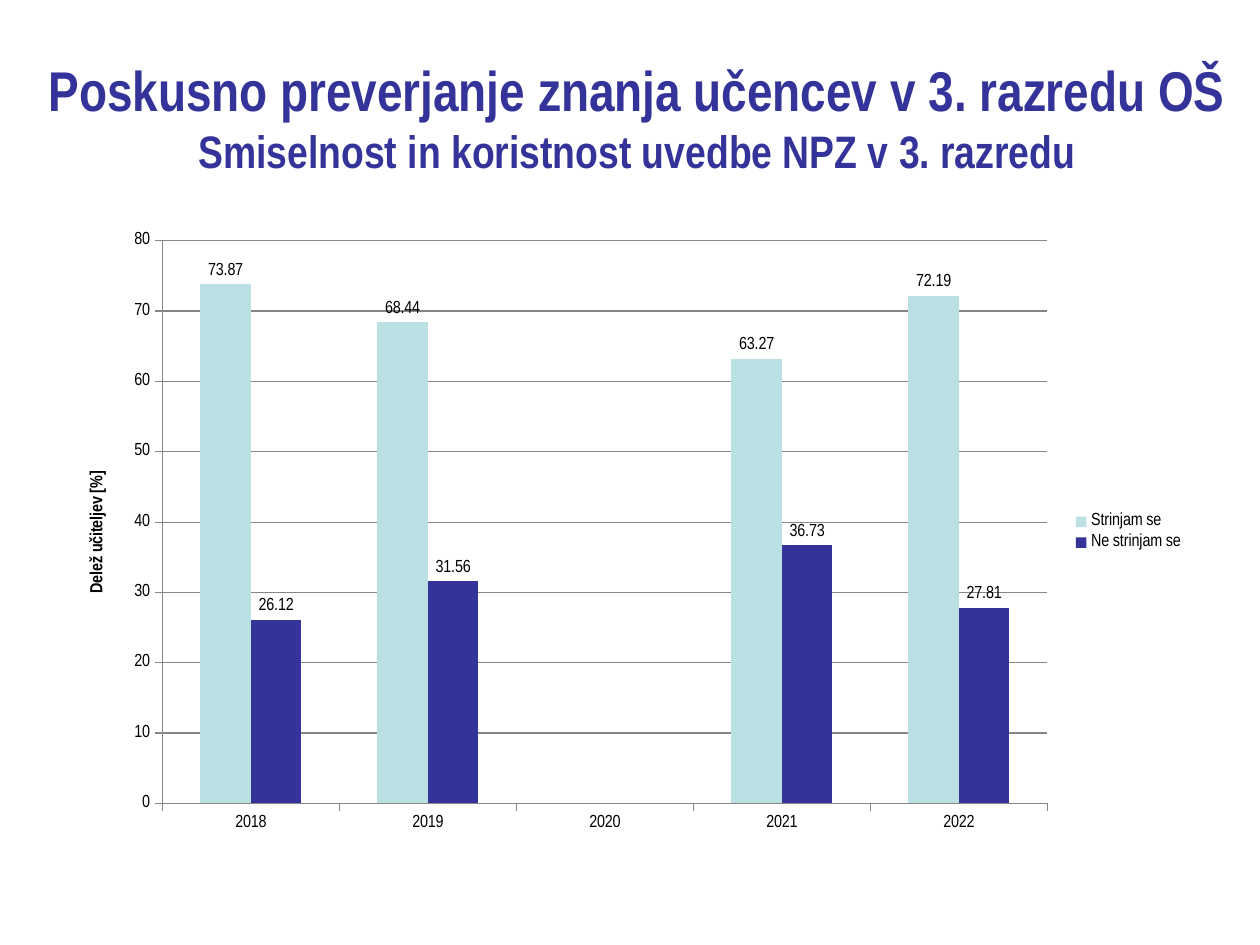
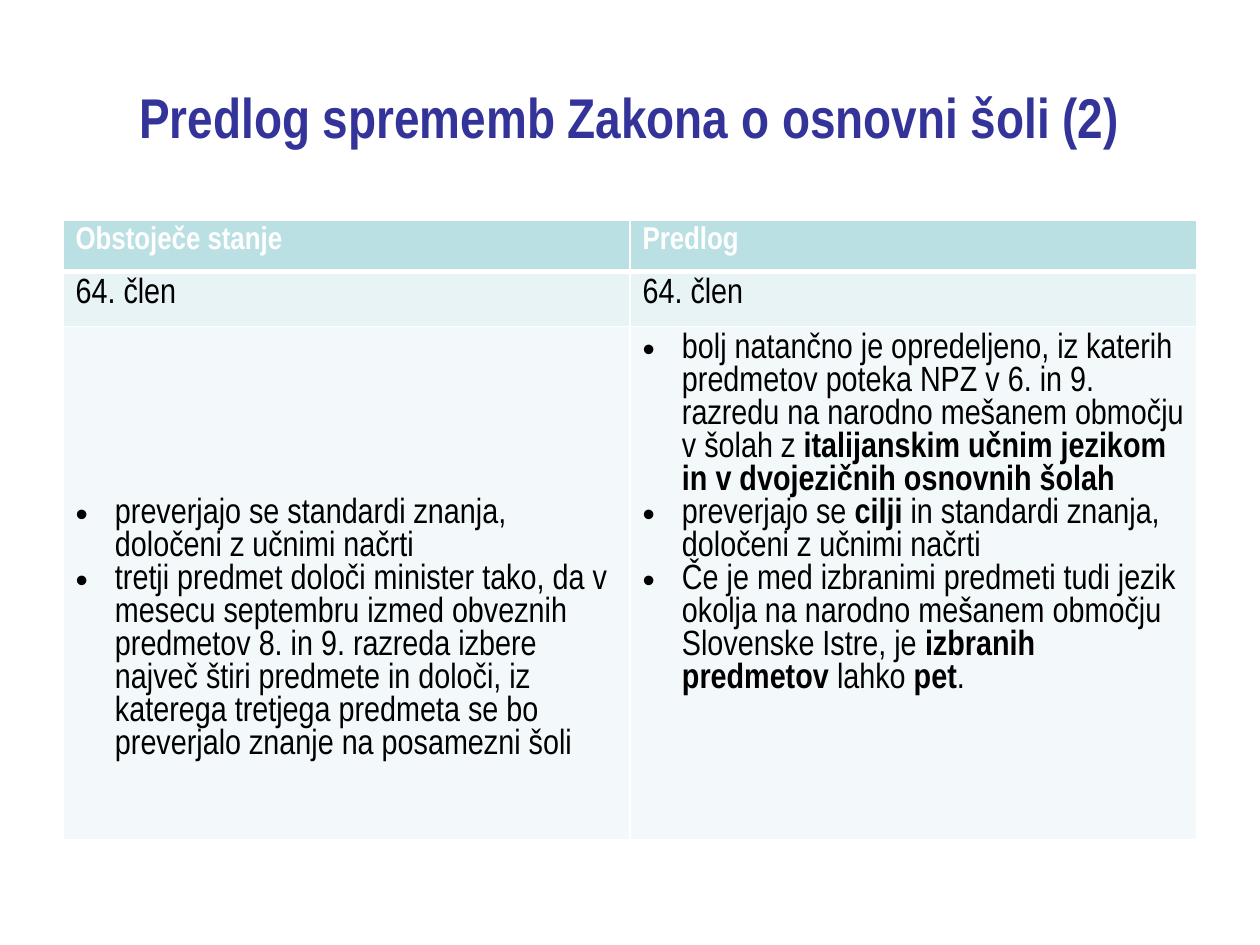
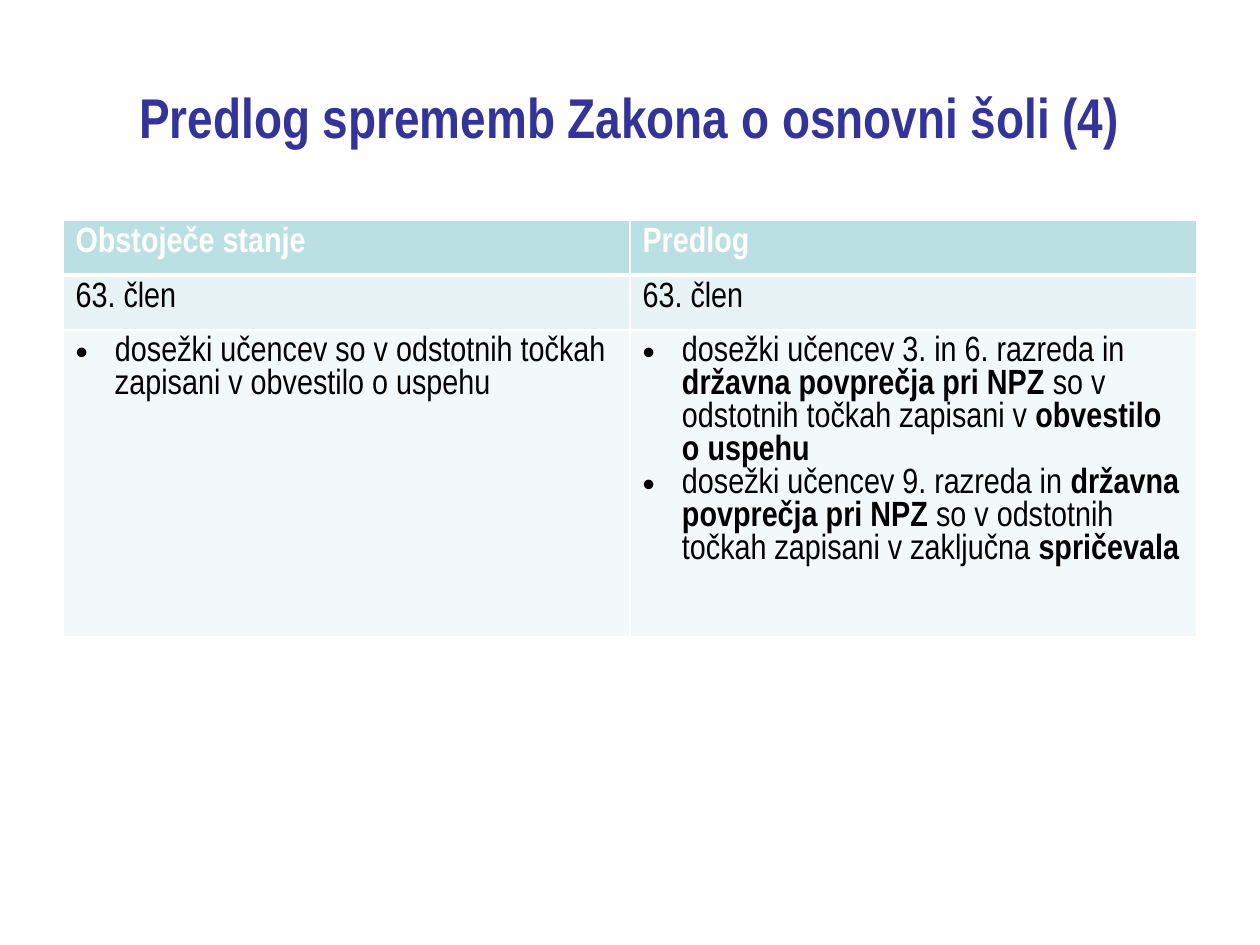
import pptx
import pptx.chart.data
import pptx.dml.color
import pptx.enum.chart
import pptx.enum.text
import pptx.oxml
import pptx.oxml.ns
import pptx.util
from dataclasses import dataclass

Pt = pptx.util.Pt


@dataclass(frozen=True)
class Theme:
    font: str = "Arial Narrow"
    navy: str = "333399"
    teal: str = "BBE0E3"
    pale: str = "E7F3F4"
    faint: str = "F3F9FA"
    white: str = "FFFFFF"
    black: str = "000000"
    grid: str = "868686"
    title_size: int = 32
    subtitle_size: int = 26
    body_size: int = 20
    chart_size: int = 10


THEME = Theme()

CHART_TITLE = [
    ("Poskusno preverjanje znanja učencev v 3. razredu OŠ", THEME.title_size),
    ("Smiselnost in koristnost uvedbe NPZ v 3. razredu", THEME.subtitle_size),
]
YEARS = ["2018", "2019", "2020", "2021", "2022"]
VALUE_TITLE = "Delež učiteljev [%]"
SERIES = [
    ("Strinjam se", [73.87, 68.44, None, 63.27, 72.19], THEME.teal),
    ("Ne strinjam se", [26.12, 31.56, None, 36.73, 27.81], THEME.navy),
]

# Text between double asterisks is bold.
COLUMN_HEADS = ["Obstoječe stanje", "Predlog"]
PROPOSALS = [
    {
        "title": "Predlog sprememb Zakona o osnovni šoli (2)",
        "head_size": 18,
        "article": "64. člen",
        "body_height": 270,
        "lines_above": (5, 0),
        "body": (
            [
                "preverjajo se standardi znanja, določeni z učnimi načrti",
                "tretji predmet določi minister tako, da v mesecu septembru izmed "
                "obveznih predmetov 8. in 9. razreda izbere največ štiri predmete in "
                "določi, iz katerega tretjega predmeta se bo preverjalo znanje na "
                "posamezni šoli",
            ],
            [
                "bolj natančno je opredeljeno, iz katerih predmetov poteka NPZ v 6. in "
                "9. razredu na narodno mešanem območju v šolah z **italijanskim učnim "
                "jezikom in v dvojezičnih osnovnih šolah**",
                "preverjajo se **cilji **in standardi znanja, določeni z učnimi načrti",
                "Če je med izbranimi predmeti tudi jezik okolja na narodno mešanem "
                "območju Slovenske Istre, je **izbranih predmetov **lahko **pet**.",
            ],
        ),
    },
    {
        "title": "Predlog sprememb Zakona o osnovni šoli (4)",
        "head_size": 20,
        "article": "63. člen",
        "body_height": 157,
        "lines_above": (0, 0),
        "body": (
            ["dosežki učencev so v odstotnih točkah zapisani v obvestilo o uspehu"],
            [
                "dosežki učencev 3. in 6. razreda in **državna povprečja pri NPZ **so v "
                "odstotnih točkah zapisani v **obvestilo o uspehu**",
                "dosežki učencev 9. razreda in **državna povprečja pri NPZ **so v "
                "odstotnih točkah zapisani v zaključna **spričevala**",
            ],
        ),
    },
]

PAGE_WIDTH, PAGE_HEIGHT = 720, 540
MARGIN, CONTENT_TOP = 36, 126
CONTENT_WIDTH = PAGE_WIDTH - 2 * MARGIN
CHART_HEIGHT = 356.4
TITLE_TOP, TITLE_HEIGHT = 21.6, 90
ROW_HEIGHT = 29.2
CELL_TOP_MARGIN = 3.6
BODY_LINE = 18.86
BULLET_INDENT = 22.5


def rgb(color):
    return pptx.dml.color.RGBColor.from_string(color)


def style(font, size, color, bold=False):
    font.name, font.size, font.bold = THEME.font, Pt(size), bold
    font.color.rgb = rgb(color)


def add_xml(parent, tag, **attributes):
    child = pptx.oxml.parse_xml(f"<{tag} {pptx.oxml.ns.nsdecls('a')}/>")
    for name, value in attributes.items():
        child.set(name, str(value))
    parent.append(child)
    return child


def add_title(page, lines, left=MARGIN, width=CONTENT_WIDTH):
    box = page.shapes.add_textbox(Pt(left), Pt(TITLE_TOP), Pt(width), Pt(TITLE_HEIGHT))
    frame = box.text_frame
    frame.word_wrap = True
    frame.vertical_anchor = pptx.enum.text.MSO_ANCHOR.MIDDLE
    frame.text = "\v".join(text for text, _ in lines)
    para = frame.paragraphs[0]
    para.alignment = pptx.enum.text.PP_ALIGN.CENTER
    for span, (_, size) in zip(para.runs, lines):
        style(span.font, size, THEME.navy, True)


def add_agreement_chart(page):
    data = pptx.chart.data.CategoryChartData()
    data.categories = YEARS
    for name, values, _ in SERIES:
        data.add_series(name, values)
    chart = page.shapes.add_chart(
        pptx.enum.chart.XL_CHART_TYPE.COLUMN_CLUSTERED,
        Pt(MARGIN), Pt(CONTENT_TOP), Pt(CONTENT_WIDTH), Pt(CHART_HEIGHT), data,
    ).chart
    style(chart.font, THEME.chart_size, THEME.black)
    chart.has_title = False
    chart.has_legend = True
    chart.legend.position = pptx.enum.chart.XL_LEGEND_POSITION.RIGHT
    chart.legend.include_in_layout = False

    plot = chart.plots[0]
    plot.gap_width, plot.overlap = 150, 0
    plot.vary_by_categories = False
    for series, (_, _, color) in zip(plot.series, SERIES):
        series.format.fill.solid()
        series.format.fill.fore_color.rgb = rgb(color)
        series.data_labels.show_value = True
        series.data_labels.position = pptx.enum.chart.XL_LABEL_POSITION.OUTSIDE_END

    value_axis = chart.value_axis
    value_axis.minimum_scale, value_axis.maximum_scale = 0, 80
    value_axis.major_unit = 10
    value_axis.axis_title.text_frame.text = VALUE_TITLE
    span = value_axis.axis_title.text_frame.paragraphs[0].runs[0]
    style(span.font, THEME.chart_size, THEME.black, True)
    for axis in (chart.category_axis, value_axis):
        axis.major_tick_mark = pptx.enum.chart.XL_TICK_MARK.OUTSIDE
        axis.format.line.color.rgb = rgb(THEME.grid)
    value_axis.major_gridlines.format.line.color.rgb = rgb(THEME.grid)


def add_borders(cell, row):
    """White lines, with a heavier one between the head and the first row."""
    properties = cell._tc.get_or_add_tcPr()
    widths = {"L": 1, "R": 1, "T": 3 if row == 1 else 1, "B": 3 if row == 0 else 1}
    for side, width in widths.items():
        line = add_xml(properties, f"a:ln{side}", w=Pt(width))
        add_xml(add_xml(line, "a:solidFill"), "a:srgbClr", val=THEME.white)


def add_bullet(para):
    properties = para._p.get_or_add_pPr()
    properties.set("marL", str(Pt(BULLET_INDENT)))
    properties.set("indent", str(-Pt(BULLET_INDENT)))
    add_xml(properties, "a:buFont", typeface="Arial")
    add_xml(properties, "a:buChar", char="•")


def fill_cell(cell, row, texts, size, ink, fill, bold=False, bullets=False):
    add_borders(cell, row)
    cell.fill.solid()
    cell.fill.fore_color.rgb = rgb(fill)
    frame = cell.text_frame
    for index, text in enumerate(texts):
        para = frame.add_paragraph() if index else frame.paragraphs[0]
        if bullets:
            add_bullet(para)
        for part_index, part in enumerate(text.split("**")):
            if part:
                span = para.add_run()
                span.text = part
                style(span.font, size, ink, bold or part_index % 2 == 1)


def add_comparison(page, proposal):
    heights = [ROW_HEIGHT, ROW_HEIGHT, proposal["body_height"]]
    table = page.shapes.add_table(
        len(heights), len(COLUMN_HEADS),
        Pt(MARGIN), Pt(CONTENT_TOP), Pt(CONTENT_WIDTH), Pt(sum(heights)),
    ).table
    for row, height in zip(table.rows, heights):
        row.height = Pt(height)
    for column, head in enumerate(COLUMN_HEADS):
        fill_cell(table.cell(0, column), 0, [head], proposal["head_size"],
                  THEME.white, THEME.teal, bold=True)
        fill_cell(table.cell(1, column), 1, [proposal["article"]], THEME.body_size,
                  THEME.black, THEME.pale)
        body = table.cell(2, column)
        body.margin_top = Pt(CELL_TOP_MARGIN + BODY_LINE * proposal["lines_above"][column])
        fill_cell(body, 2, proposal["body"][column], THEME.body_size,
                  THEME.black, THEME.faint, bullets=True)


def main():
    deck = pptx.Presentation()
    deck.slide_width, deck.slide_height = Pt(PAGE_WIDTH), Pt(PAGE_HEIGHT)
    blank = deck.slide_layouts[6]

    page = deck.slides.add_slide(blank)
    add_title(page, CHART_TITLE, left=0, width=728.64)
    add_agreement_chart(page)

    for proposal in PROPOSALS:
        page = deck.slides.add_slide(blank)
        add_title(page, [(proposal["title"], THEME.title_size)])
        add_comparison(page, proposal)

    deck.save("out.pptx")


if __name__ == "__main__":
    main()
